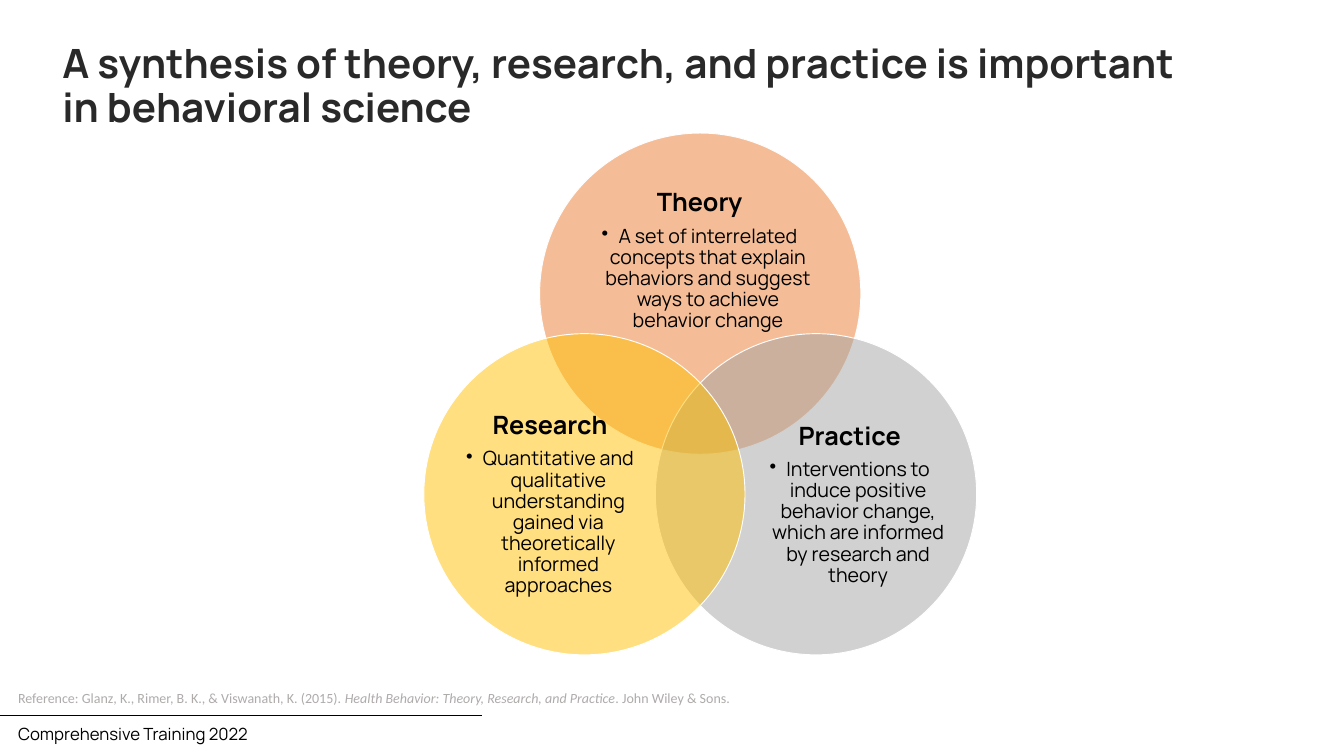
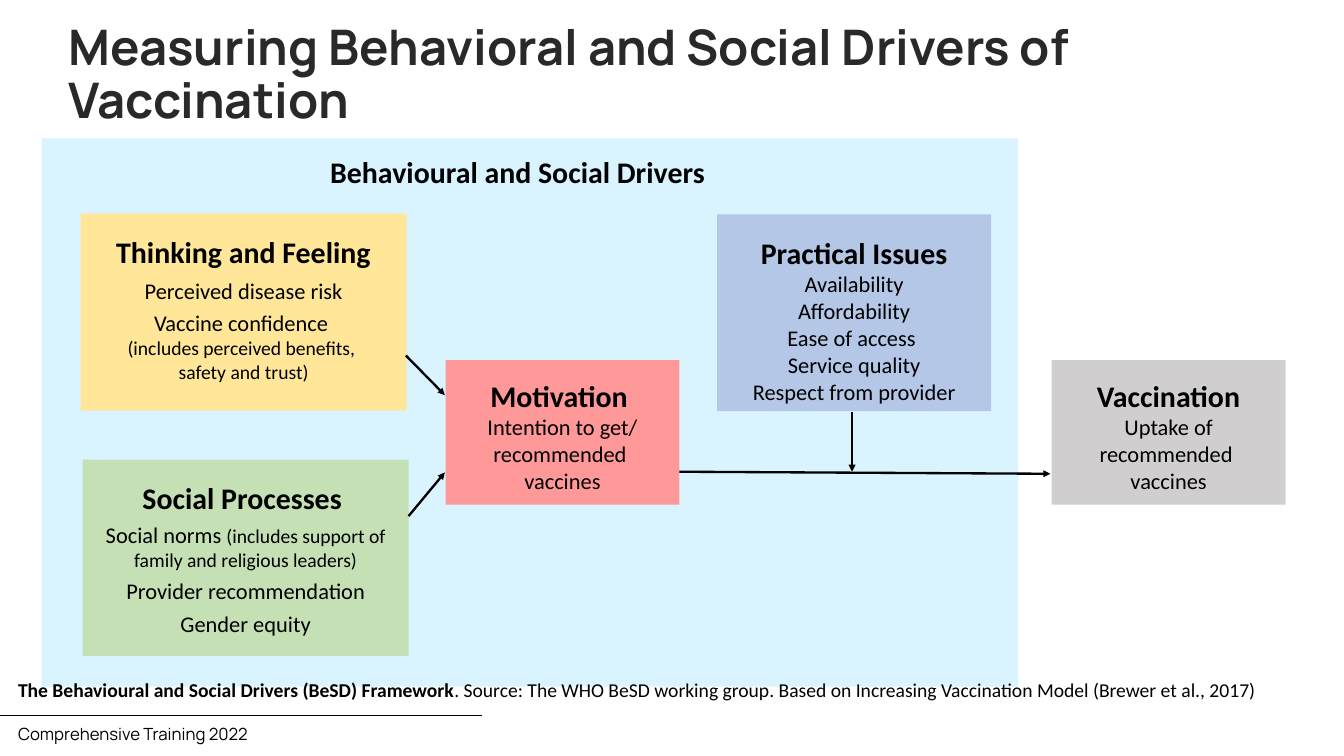
"""Build two slides on behavioural science: a Venn diagram and the BeSD framework."""
from math import cos, radians, sin

from lxml.etree import SubElement
from pptx import Presentation
from pptx.dml.color import RGBColor
from pptx.enum.shapes import MSO_CONNECTOR as Line, MSO_SHAPE as Preset
from pptx.enum.text import MSO_ANCHOR as Anchor, PP_ALIGN as Align
from pptx.oxml.ns import qn
from pptx.util import Inches, Pt

BLACK, WHITE, TITLE_INK, REFERENCE_INK = "000000", "FFFFFF", "292929", "AFABAB"
BRAND_FONT, BODY_FONT = "Manrope", "Calibri"
HEADING, ITEM, DETAIL = 32, 24, 21
MARGINS = (0.1, 0.05, 0.1, 0.05)

FOOTER = "Comprehensive Training 2022"

SYNTHESIS_TITLE = "A synthesis of theory, research, and practice is important in behavioral science"
VENN_CENTRE, VENN_ORBIT, CIRCLE_SIZE = (10.42, 6.36), 1.99, 4.78
CIRCLES = [
    ("Theory", "A set of interrelated concepts that explain behaviors and suggest ways to achieve "
     "behavior change", "ED7D31", -90, (8.66, 2.81, 3.5, 2.15)),
    ("Practice", "Interventions to induce positive behavior change, which are informed by research "
     "and theory", "A5A5A5", 30, (11.21, 6.2, 2.87, 2.63)),
    ("Research", "Quantitative and qualitative understanding gained via theoretically informed "
     "approaches", "FFC000", 150, (6.75, 6.2, 2.87, 2.63)),
]
REFERENCE = [
    ("Reference: Glanz, K., Rimer, B. K., & Viswanath, K. (2015). ", {}),
    ("Health Behavior: Theory, Research, and Practice", {"italic": True}),
    (". John Wiley & Sons.", {}),
]

DRIVERS_TITLE = "Measuring Behavioral and Social Drivers of Vaccination"
DRIVERS_HEADING = "Behavioural and Social Drivers"
DRIVERS_PANEL = (0.62, 2.06, 14.53, 8.16)
DRIVERS = [
    {"at": (1.2, 3.18, 4.85, 2.93), "fill": "FFE699", "margins": (0.1, 0.3, 0.1, 0.05),
     "heading": "Thinking and Feeling",
     "items": [(7.5, [("Perceived disease risk", ITEM)]),
               (6, [("Vaccine confidence \n", ITEM),
                    ("(includes perceived benefits, \nsafety and trust)", DETAIL)])]},
    {"at": (1.23, 6.84, 4.85, 2.92), "fill": "C5E0B4", "margins": (0, 0.3, 0, 0.05),
     "heading": "Social Processes ",
     "items": [(6, [("Social norms ", ITEM),
                    ("(includes support of family and religious leaders)", DETAIL)]),
               (6, [("Provider recommendation", ITEM)]),
               (6, [("Gender equity", ITEM)])]},
    {"at": (6.63, 5.36, 3.48, 2.15), "fill": "FF9999", "margins": (0.1, 0.15, 0.1, 0.05),
     "anchor": Anchor.MIDDLE, "heading": "Motivation ",
     "items": [(0, [("Intention to get/\nrecommended ", ITEM)]), (0, [("vaccines", ITEM)])]},
    {"at": (10.67, 3.19, 4.08, 2.93), "fill": "B4C7E7", "margins": (0.1, 0.3, 0.1, 0.05),
     "heading": "Practical Issues",
     "items": [(0, [(issue, ITEM)]) for issue in (
         "Availability", " Affordability ", "Ease of access ", "Service quality",
         "Respect from provider")]},
    {"at": (15.65, 5.36, 3.48, 2.15), "fill": "D0CECE", "margins": (0.1, 0.15, 0.1, 0.05),
     "anchor": Anchor.MIDDLE, "heading": "Vaccination",
     "items": [(0, [("Uptake of recommended ", ITEM)]), (0, [("vaccines", ITEM)])]},
]
ARROWS = [
    (6.04, 5.29, 6.62, 5.88),
    (6.08, 7.68, 6.62, 7.03),
    (10.11, 7.02, 15.63, 7.05),
    (12.68, 6.13, 12.68, 7.02),
]
SOURCE = [
    ("The Behavioural and Social Drivers (BeSD) Framework", {"bold": True}),
    (". Source: The WHO BeSD working group. Based on Increasing Vaccination Model "
     "(Brewer et al., 2017)", {}),
]


def rgb(colour):
    return RGBColor.from_string(colour)


def style_font(font, **values):
    font.color.rgb = rgb(values.pop("colour", BLACK))
    for name, value in values.items():
        setattr(font, name, value)


def write_paragraph(paragraph, runs, base, layout=None):
    for name, value in (layout or {}).items():
        setattr(paragraph, name, value)
    for text, changes in runs:
        for number, part in enumerate(text.split("\n")):
            if number:
                paragraph.add_line_break()
            if part:
                run = paragraph.add_run()
                run.text = part
                style_font(run.font, **{**base, **changes})


def set_frame(frame, margins=MARGINS, anchor=Anchor.TOP):
    frame.word_wrap = True
    frame.vertical_anchor = anchor
    for side, margin in zip(("left", "top", "right", "bottom"), margins):
        setattr(frame, f"margin_{side}", Inches(margin))
    return frame


def add_text(slide, at, runs, size, font=BODY_FONT, layout=None, **style):
    frame = set_frame(slide.shapes.add_textbox(*map(Inches, at)).text_frame)
    base = {"size": Pt(size), "name": font, **style}
    write_paragraph(frame.paragraphs[0], runs, base, layout)


def add_area(slide, preset, at, fill):
    area = slide.shapes.add_shape(preset, *map(Inches, at))
    area.shadow.inherit = False
    area.fill.solid()
    area.fill.fore_color.rgb = rgb(fill)
    area.line.fill.background()
    return area


def add_line(slide, ends, width, arrow=False):
    line = slide.shapes.add_connector(Line.STRAIGHT, *map(Inches, ends))
    line.line.color.rgb = rgb(BLACK)
    line.line.width = Pt(width)
    if arrow:
        SubElement(line.line._get_or_add_ln(), qn("a:tailEnd"), type="triangle")
    SubElement(line._element.spPr, qn("a:effectLst"))


def add_slide(deck, title, left, top, size):
    slide = deck.slides.add_slide(deck.slide_layouts[6])
    add_text(slide, (0.17, 10.72, 6.58, 0.4), [(FOOTER, {})], 18, BRAND_FONT)
    add_line(slide, (-0.08, 10.65, 7.17, 10.65), 0.5)
    add_text(slide, (left, top, 17.25, 1.28), [(title, {})], size, BRAND_FONT,
             {"line_spacing": 0.9}, colour=TITLE_INK, bold=True)
    return slide


def add_circle(slide, fill, angle):
    left, top = (centre + VENN_ORBIT * turn(radians(angle)) - CIRCLE_SIZE / 2
                 for centre, turn in zip(VENN_CENTRE, (cos, sin)))
    circle = add_area(slide, Preset.OVAL, (left, top, CIRCLE_SIZE, CIRCLE_SIZE), fill)
    SubElement(circle._element.spPr.find(".//" + qn("a:srgbClr")), qn("a:alpha"), val="50000")
    circle.line.color.rgb = rgb(WHITE)
    circle.line.width = Pt(1)


def add_definition(slide, term, meaning, at):
    frame = slide.shapes.add_textbox(*map(Inches, at)).text_frame
    set_frame(frame, (0, 0, 0, 0), Anchor.MIDDLE)
    layout = {"alignment": Align.CENTER, "line_spacing": 0.9}
    write_paragraph(frame.paragraphs[0], [(term, {})],
                    {"size": Pt(27), "name": BRAND_FONT, "bold": True},
                    {**layout, "space_after": Pt(9.5)})
    bullet = frame.add_paragraph()
    write_paragraph(bullet, [(meaning, {})], {"size": Pt(21), "name": BRAND_FONT},
                    {**layout, "level": 1, "space_after": Pt(3)})
    properties = bullet._p.get_or_add_pPr()
    properties.set("marL", str(Inches(0.25)))
    properties.set("indent", str(Inches(-0.25)))
    SubElement(properties, qn("a:buChar"), char="•")


def add_driver(slide, driver):
    box = add_area(slide, Preset.RECTANGLE, driver["at"], driver["fill"])
    frame = set_frame(box.text_frame, driver["margins"], driver.get("anchor", Anchor.TOP))
    base = {"name": BODY_FONT, "bold": False}
    write_paragraph(frame.paragraphs[0], [(driver["heading"], {"bold": True})],
                    {**base, "size": Pt(HEADING)}, {"alignment": Align.CENTER})
    for gap, runs in driver["items"]:
        write_paragraph(frame.add_paragraph(), [(text, {"size": Pt(size)}) for text, size in runs],
                        base, {"alignment": Align.CENTER, "space_before": Pt(gap)})


def build_synthesis(deck):
    slide = add_slide(deck, SYNTHESIS_TITLE, 0.83, 0.6, 43.2)
    for term, meaning, fill, angle, text_at in CIRCLES:
        add_circle(slide, fill, angle)
        add_definition(slide, term, meaning, text_at)
    add_text(slide, (0.17, 10.21, 13.36, 0.35), REFERENCE, 15, colour=REFERENCE_INK)


def build_drivers(deck):
    slide = add_slide(deck, DRIVERS_TITLE, 0.92, 0.3, 52.5)
    add_area(slide, Preset.RECTANGLE, DRIVERS_PANEL, "D9F4FF")
    for driver in DRIVERS:
        add_driver(slide, driver)
    for ends in ARROWS:
        add_line(slide, ends, 2.5, arrow=True)
    add_text(slide, (0.17, 10.04, 19.26, 0.45), SOURCE, DETAIL)
    add_text(slide, (0.62, 2.24, 14.17, 0.64), [(DRIVERS_HEADING, {})], HEADING,
             layout={"alignment": Align.CENTER}, bold=True)


def main():
    deck = Presentation()
    deck.slide_width, deck.slide_height = Inches(20), Inches(11.25)
    build_synthesis(deck)
    build_drivers(deck)
    deck.save("out.pptx")


if __name__ == "__main__":
    main()
